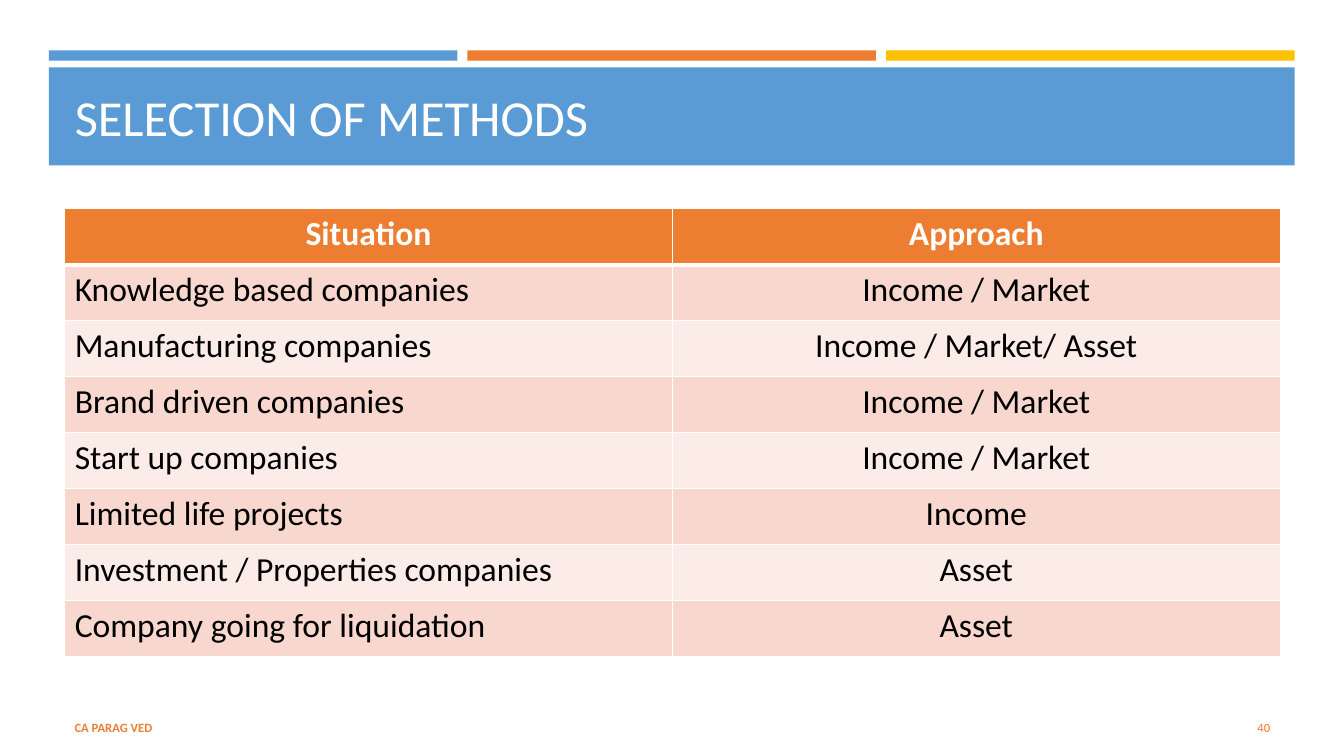
import pptx
import pptx.dml.color
import pptx.enum.shapes
import pptx.enum.text
import pptx.oxml
import pptx.oxml.ns
import pptx.util

Cm = pptx.util.Cm
Pt = pptx.util.Pt
RGBColor = pptx.dml.color.RGBColor
Align = pptx.enum.text.PP_ALIGN
Anchor = pptx.enum.text.MSO_ANCHOR

BLUE = RGBColor(0x5B, 0x9B, 0xD5)
ORANGE = RGBColor(0xED, 0x7D, 0x31)
GOLD = RGBColor(0xFF, 0xC0, 0x00)
ROSE = RGBColor(0xF8, 0xD7, 0xCE)
BLUSH = RGBColor(0xFC, 0xEC, 0xE8)
WHITE = RGBColor(0xFF, 0xFF, 0xFF)
BLACK = RGBColor(0x00, 0x00, 0x00)

ROWS = [
    ("Situation", "Approach"),
    ("Knowledge based companies", "Income / Market"),
    ("Manufacturing companies", "Income / Market/ Asset"),
    ("Brand driven companies", "Income / Market"),
    ("Start up companies", "Income / Market"),
    ("Limited life projects", "Income"),
    ("Investment / Properties companies", "Asset"),
    ("Company going for liquidation", "Asset"),
]


def style(para, size, color, bold=False, align=Align.LEFT):
    para.alignment = align
    font = para.font
    font.name = "Calibri"
    font.size = Pt(size)
    font.bold = bold
    font.color.rgb = color


def add_bar(slide, left, top, width, height, color):
    kind = pptx.enum.shapes.MSO_SHAPE.RECTANGLE
    bar = slide.shapes.add_shape(kind, left, top, width, height)
    bar.shadow.inherit = False
    bar.fill.solid()
    bar.fill.fore_color.rgb = color
    bar.line.fill.background()
    slide.shapes.title.element.addprevious(bar.element)


def add_header(slide, left, top, width, height):
    gap = Cm(0.25)
    strip = (width - 2 * gap) // 3
    for i, color in enumerate((BLUE, ORANGE, GOLD)):
        add_bar(slide, left + i * (strip + gap), top, strip, Cm(0.26), color)
    band = top + Cm(0.43)
    deep = height - Cm(0.43)
    add_bar(slide, left, band, width, deep, BLUE)

    title = slide.shapes.title
    title.left, title.top = left + Cm(0.4), band + Cm(0.18)
    title.width, title.height = width - Cm(0.8), deep - Cm(0.36)
    frame = title.text_frame
    frame.text = "SELECTION OF METHODS"
    frame.auto_size = pptx.enum.text.MSO_AUTO_SIZE.NONE
    frame.vertical_anchor = Anchor.MIDDLE
    style(frame.paragraphs[0], 36, WHITE)


def add_edge(cell, side, points):
    cell._tc.get_or_add_tcPr().append(pptx.oxml.parse_xml(
        f'<a:{side} {pptx.oxml.ns.nsdecls("a")} w="{Pt(points)}">'
        f'<a:solidFill><a:srgbClr val="{WHITE}"/></a:solidFill></a:{side}>'))


def add_grid(slide, left, top, width, height):
    cols = len(ROWS[0])
    grid = slide.shapes.add_table(len(ROWS), cols, left, top, width, height).table
    for r, texts in enumerate(ROWS):
        head = r == 0
        fill = ORANGE if head else (BLUSH, ROSE)[r % 2]
        for c, text in enumerate(texts):
            cell = grid.cell(r, c)
            for side in ("lnL", "lnR", "lnT", "lnB"):
                thick = (head and side == "lnB") or (r == 1 and side == "lnT")
                add_edge(cell, side, 3 if thick else 1)
            cell.fill.solid()
            cell.fill.fore_color.rgb = fill
            cell.text = text
            align = Align.CENTER if head or c else Align.LEFT
            style(cell.text_frame.paragraphs[0], 24, WHITE if head else BLACK, head, align)


def add_note(slide, left, top, width, height, text, bold, align):
    frame = slide.shapes.add_textbox(left, top, width, height).text_frame
    frame.word_wrap = True
    frame.vertical_anchor = Anchor.MIDDLE
    frame.text = text
    style(frame.paragraphs[0], 9, ORANGE, bold, align)


def add_footer(slide, left, top, width, height):
    page = Cm(2.92)
    add_note(slide, left + width - page, top, page, height, "40", False, Align.RIGHT)
    add_note(slide, left, top, Cm(19.2), height, "CA PARAG VED", True, Align.LEFT)


def main():
    deck = pptx.Presentation()
    deck.slide_width, deck.slide_height = Cm(33.87), Cm(19.05)
    slide = deck.slides.add_slide(deck.slide_layouts[5])
    add_header(slide, Cm(1.23), Cm(1.27), Cm(31.4), Cm(2.9))
    add_grid(slide, Cm(1.63), Cm(5.26), Cm(30.63), Cm(11.28))
    add_footer(slide, Cm(1.63), Cm(17.83), Cm(30.63), Cm(1.02))
    deck.save("out.pptx")


if __name__ == "__main__":
    main()
